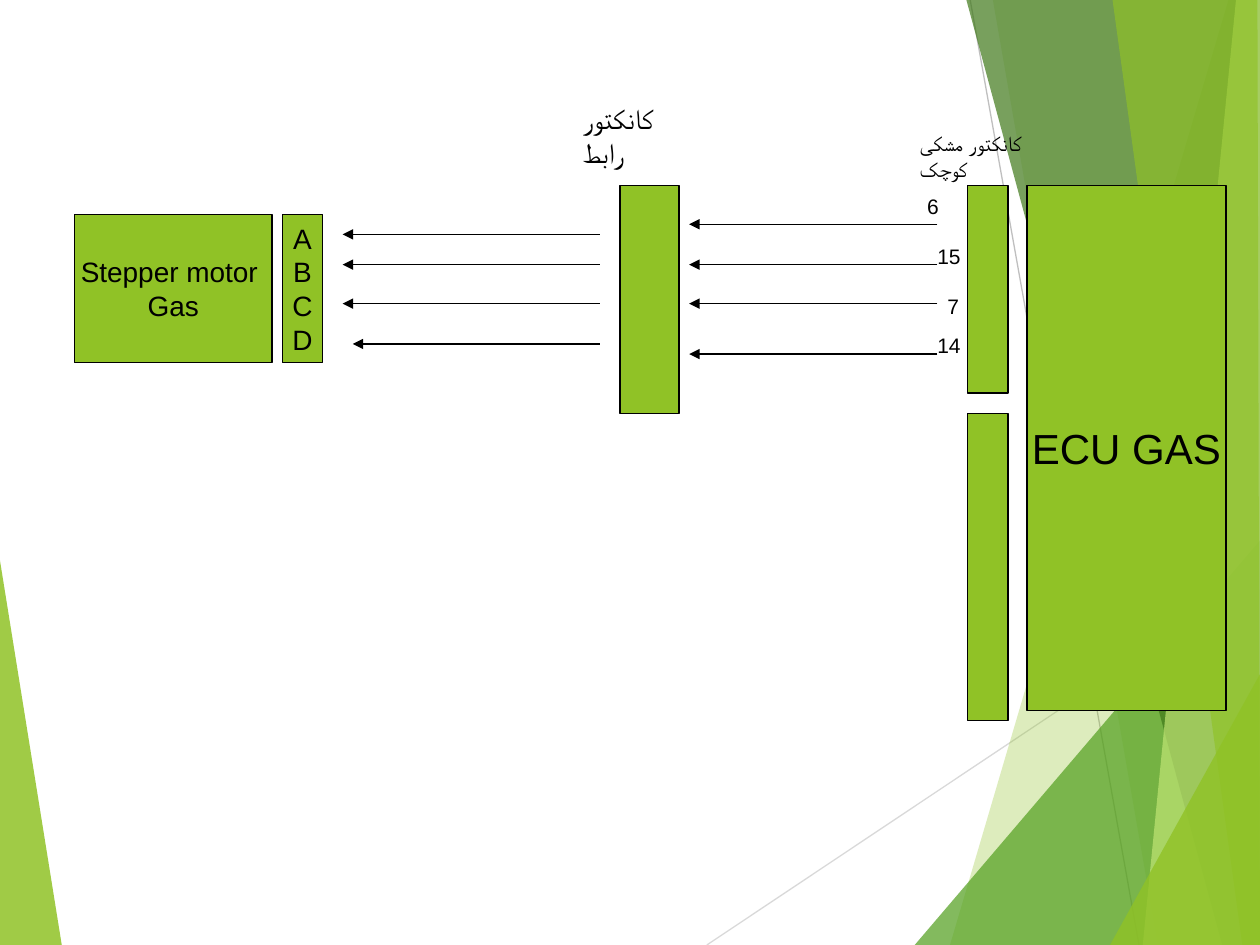
"""Build the wiring slide between the stepper motor and the gas ECU."""
from typing import NamedTuple

from lxml.etree import SubElement
from pptx import Presentation
from pptx.dml.color import RGBColor
from pptx.enum.shapes import MSO_CONNECTOR, MSO_SHAPE
from pptx.enum.text import MSO_ANCHOR, MSO_AUTO_SIZE, PP_ALIGN
from pptx.oxml.ns import qn
from pptx.shapes.shapetree import SlideShapes
from pptx.text.text import TextFrame
from pptx.util import Pt

PX = 9144
WIDTH, HEIGHT = 1000, 750
FONT = "Arial"
BLACK = RGBColor(0x00, 0x00, 0x00)
WHITE = RGBColor(0xFF, 0xFF, 0xFF)
LIME = RGBColor(0x90, 0xC2, 0x26)
GREEN = RGBColor(0x54, 0xA0, 0x21)
FOREST = RGBColor(0x3F, 0x78, 0x19)
PALE = RGBColor(0xC0, 0xE4, 0x74)
SILVER = RGBColor(0xD9, 0xD9, 0xD9)
GRAY = RGBColor(0xBF, 0xBF, 0xBF)


class Facet(NamedTuple):
    corners: tuple[tuple[int, int], ...]
    color: RGBColor
    opacity: int


class Line(NamedTuple):
    start: tuple[int, int]
    end: tuple[int, int]
    color: RGBColor = BLACK
    arrow: bool = False


class Block(NamedTuple):
    left: int
    top: int
    width: int
    height: int
    text: str = ""
    size: int = 16


class Label(NamedTuple):
    left: int
    top: int
    width: int
    height: int
    text: str
    size: int = 12
    wrap: bool = False


LEFT_FACET = Facet(((0, 445), (49, HEIGHT), (0, HEIGHT)), LIME, 85)
RIGHT_FACETS = (
    Facet(((975, 0), (754, HEIGHT), (WIDTH, HEIGHT), (WIDTH, 0)), LIME, 30),
    Facet(((788, 0), (919, HEIGHT), (WIDTH, HEIGHT), (WIDTH, 0)), LIME, 20),
    Facet(((726, HEIGHT), (WIDTH, 429), (WIDTH, HEIGHT)), GREEN, 72),
    Facet(((767, 0), (970, HEIGHT), (WIDTH, HEIGHT), (WIDTH, 0)), FOREST, 70),
    Facet(((981, 0), (907, HEIGHT), (WIDTH, HEIGHT), (WIDTH, 0)), PALE, 70),
    Facet(((883, 0), (986, HEIGHT), (WIDTH, HEIGHT), (998, 0)), LIME, 65),
    Facet(((881, HEIGHT), (WIDTH, 535), (WIDTH, HEIGHT)), LIME, 80),
)
RAYS = (
    Line((561, HEIGHT), (WIDTH, 457), SILVER),
    Line((770, 0), (904, HEIGHT), GRAY),
)
BLOCKS = (
    Block(59, 170, 157, 118, "Stepper motor \nGas"),
    Block(224, 170, 32, 118, "A\vB\vC\vD"),
    Block(492, 147, 47, 181),
    Block(768, 147, 32, 165),
    Block(815, 147, 158, 417, "ECU GAS", 24),
    Block(768, 328, 32, 244),
)
MOTOR_WIRES = ((272, 186), (272, 210), (272, 241), (280, 273))
ECU_WIRE_LEVELS = (178, 210, 241, 281)
LABELS = (
    Label(453, 76, 108, 37, "کانکتور رابط", 16, True),
    Label(720, 99, 138, 30, "کانکتور مشکی کوچک", 12, True),
    Label(726, 149, 29, 30, "6"),
    Label(734, 188, 39, 30, "15"),
    Label(742, 228, 29, 30, "7"),
    Label(734, 259, 39, 30, "14"),
)


def write(frame: TextFrame, text: str, *, size: int, align: PP_ALIGN,
          anchor: MSO_ANCHOR, wrap: bool = False) -> None:
    frame.text = text
    frame.word_wrap = wrap
    frame.vertical_anchor = anchor
    for paragraph in frame.paragraphs:
        paragraph.alignment = align
        for run in paragraph.runs:
            run.font.name = FONT
            SubElement(run.font._element, qn("a:cs"), typeface=FONT)
        paragraph.font.name = FONT
        paragraph.font.size = Pt(size)
        paragraph.font.color.rgb = BLACK


def draw_facet(shapes: SlideShapes, facet: Facet) -> None:
    start, *rest = facet.corners
    builder = shapes.build_freeform(*start, scale=PX)
    builder.add_line_segments(rest, close=True)
    shape = builder.convert_to_shape()
    shape.shadow.inherit = False
    shape.fill.solid()
    shape.fill.fore_color.rgb = facet.color
    shape.line.fill.background()
    color = shape.fill._xPr.find(qn("a:solidFill"))[0]
    SubElement(color, qn("a:alpha"), val=str(facet.opacity * 1000))


def draw_line(shapes: SlideShapes, line: Line) -> None:
    ends = (value * PX for value in (*line.start, *line.end))
    connector = shapes.add_connector(MSO_CONNECTOR.STRAIGHT, *ends)
    connector.line.color.rgb = line.color
    connector.line.width = Pt(0.75)
    if line.arrow:
        SubElement(connector.line._get_or_add_ln(), qn("a:tailEnd"), type="triangle")
    SubElement(connector._element.spPr, qn("a:effectLst"))


def draw_block(shapes: SlideShapes, block: Block) -> None:
    shape = shapes.add_shape(MSO_SHAPE.RECTANGLE, *(value * PX for value in block[:4]))
    shape.shadow.inherit = False
    shape.fill.solid()
    shape.fill.fore_color.rgb = LIME
    shape.line.color.rgb = BLACK
    shape.line.width = Pt(0.75)
    if block.text:
        write(shape.text_frame, block.text, size=block.size,
              align=PP_ALIGN.CENTER, anchor=MSO_ANCHOR.MIDDLE)


def draw_label(shapes: SlideShapes, label: Label) -> None:
    box = shapes.add_textbox(*(value * PX for value in label[:4]))
    write(box.text_frame, label.text, size=label.size, align=PP_ALIGN.LEFT,
          anchor=MSO_ANCHOR.TOP, wrap=label.wrap)
    box.text_frame.auto_size = MSO_AUTO_SIZE.SHAPE_TO_FIT_TEXT


def main() -> None:
    deck = Presentation()
    deck.slide_width, deck.slide_height = WIDTH * PX, HEIGHT * PX
    slide = deck.slides.add_slide(deck.slide_layouts[6])
    slide.background.fill.solid()
    slide.background.fill.fore_color.rgb = WHITE
    shapes = slide.shapes

    draw_facet(shapes, LEFT_FACET)
    for ray in RAYS:
        draw_line(shapes, ray)
    for facet in RIGHT_FACETS:
        draw_facet(shapes, facet)
    for block in BLOCKS:
        draw_block(shapes, block)
    for tip, level in MOTOR_WIRES:
        draw_line(shapes, Line((476, level), (tip, level), arrow=True))
    for level in ECU_WIRE_LEVELS:
        draw_line(shapes, Line((744, level), (547, level), arrow=True))
    for label in LABELS:
        draw_label(shapes, label)
    deck.save("out.pptx")


if __name__ == "__main__":
    main()
